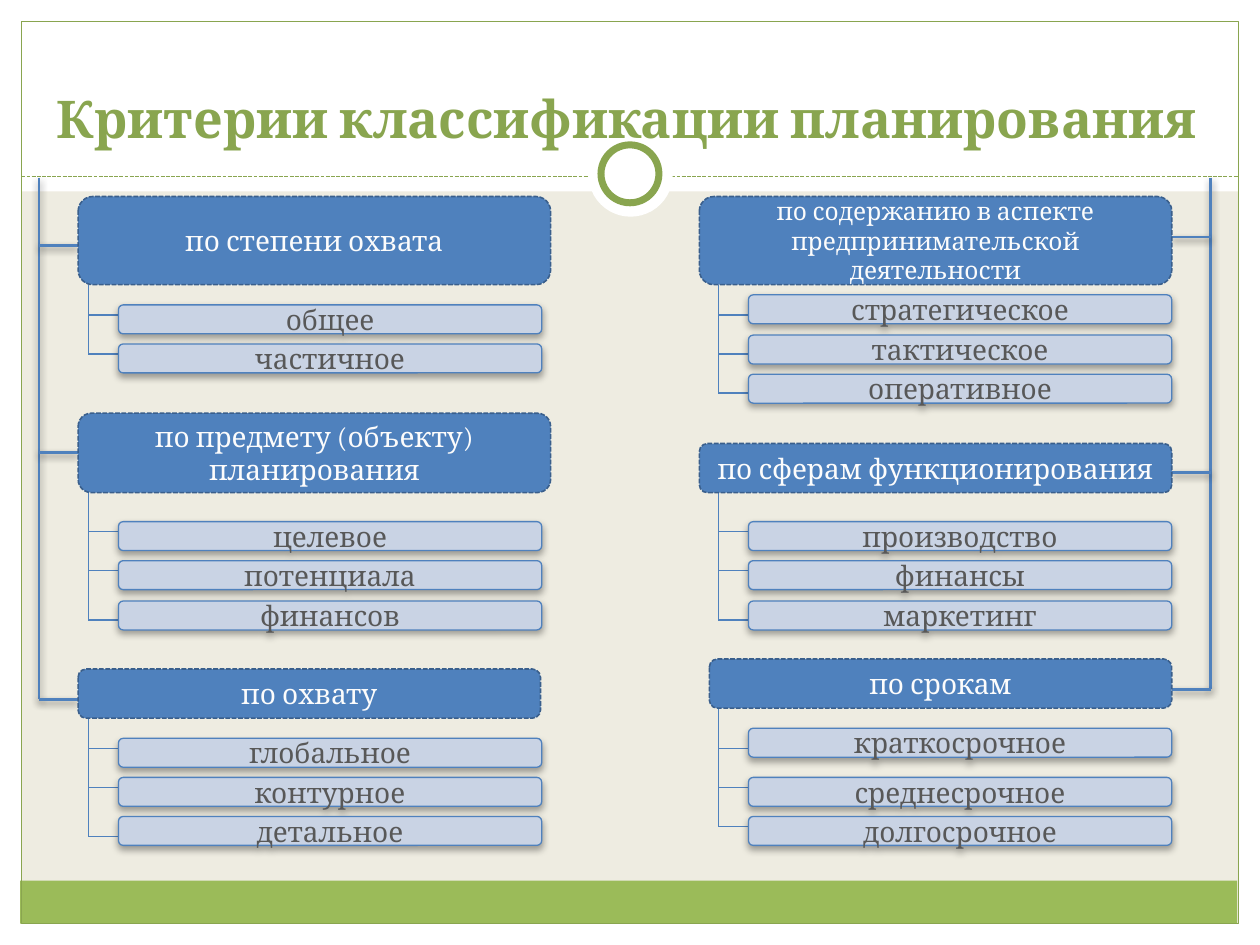
from lxml import etree
from pptx import Presentation
from pptx.dml.color import RGBColor
from pptx.enum.dml import MSO_LINE
from pptx.enum.shapes import MSO_CONNECTOR, MSO_SHAPE
from pptx.enum.text import MSO_ANCHOR, PP_ALIGN
from pptx.oxml import parse_xml
from pptx.oxml.ns import nsdecls, qn
from pptx.util import Inches, Pt

RECT, ROUND, OVAL = MSO_SHAPE.RECTANGLE, MSO_SHAPE.ROUNDED_RECTANGLE, MSO_SHAPE.OVAL
DASH = MSO_LINE.SQUARE_DOT
FONT = "Cambria"
WHITE, GREEN, BLUE = "FFFFFF", "89A54F", "4F81BD"
TITLE = "Критерии классификации планирования"

BARS = [
    ((0, 7.33, 10, 0.17), WHITE),
    ((0, 0, 10, 1.52), WHITE),
    ((0, 0, 0.17, 7.5), WHITE),
    ((9.83, 0, 0.17, 7.5), WHITE),
    ((0.16, 6.99, 9.66, 0.34), "9BBB59"),
]

# rail: x of the trunk; edge: x where its branches meet the heads
# group: head text, size, box, branch y, items as (text, top, branch y)
SIDES = [
    {"rail": 0.31, "edge": 0.62, "stem": 0.7, "groups": [
        ("по степени охвата", 16, (0.62, 1.56, 3.75, 0.7), 1.95,
         [("общее", 2.42, 2.5), ("частичное", 2.73, 2.81)]),
        ("по предмету (объекту) планирования", 16, (0.62, 3.28, 3.75, 0.63), 3.59,
         [("целевое", 4.14, 4.22), ("потенциала", 4.45, 4.53), ("финансов", 4.77, 4.92)]),
        ("по охвату", 16, (0.62, 5.31, 3.67, 0.39), 5.55,
         [("глобальное", 5.86, 5.94), ("контурное", 6.17, 6.25), ("детальное", 6.48, 6.64)]),
    ]},
    {"rail": 9.61, "edge": 9.3, "stem": 5.7, "groups": [
        ("по содержанию в аспекте предпринимательской деятельности", 14,
         (5.55, 1.56, 3.75, 0.7), 1.88,
         [("стратегическое", 2.34, 2.5), ("тактическое", 2.66, 2.81),
          ("оперативное", 2.97, 3.12)]),
        ("по сферам функционирования", 16, (5.55, 3.52, 3.75, 0.39), 3.75,
         [("производство", 4.14, 4.22), ("финансы", 4.45, 4.53), ("маркетинг", 4.77, 4.92)]),
        ("по срокам", 16, (5.63, 5.23, 3.67, 0.39), 5.47,
         [("краткосрочное", 5.78, 5.94), ("среднесрочное", 6.17, 6.25),
          ("долгосрочное", 6.48, 6.56)]),
    ]},
]


def rgb(code):
    return RGBColor.from_string(code)


def shade(item, alpha):
    """Give a shape or line a soft shadow straight below it."""
    props = item._element.spPr
    for old in props.findall(qn("a:effectLst")):
        props.remove(old)
    props.append(parse_xml(
        f'<a:effectLst {nsdecls("a")}><a:outerShdw blurRad="{Pt(4)}" dist="{Pt(2)}" '
        f'dir="5400000" rotWithShape="0"><a:srgbClr val="000000">'
        f'<a:alpha val="{alpha * 1000}"/></a:srgbClr></a:outerShdw></a:effectLst>'))


def stroke(line, color, width, dash=None):
    line.color.rgb = rgb(color)
    line.width = Pt(width)
    if dash:
        line.dash_style = dash


def add_box(slide, kind, box, fill=None, line=None):
    shape = slide.shapes.add_shape(kind, *map(Inches, box))
    shape.shadow.inherit = False
    if fill:
        shape.fill.solid()
        shape.fill.fore_color.rgb = rgb(fill)
    else:
        shape.fill.background()
    if line:
        stroke(shape.line, *line)
    else:
        shape.line.fill.background()
    return shape


def add_line(slide, x1, y1, x2, y2, color=BLUE, width=0.75, dash=None):
    line = slide.shapes.add_connector(
        MSO_CONNECTOR.STRAIGHT, *map(Inches, (x1, y1, x2, y2)))
    stroke(line.line, color, width, dash)
    etree.SubElement(line._element.spPr, qn("a:effectLst"))
    return line


def write(shape, text, size, color, bold=False):
    frame = shape.text_frame
    frame.text = text
    frame.word_wrap = True
    frame.vertical_anchor = MSO_ANCHOR.MIDDLE
    par = frame.paragraphs[0]
    par.alignment = PP_ALIGN.CENTER
    font = par.runs[0].font
    font.name, font.size, font.bold = FONT, Pt(size), bold
    font.color.rgb = rgb(color)


def add_frame(slide):
    for box, fill in BARS:
        add_box(slide, RECT, box, fill)
    add_box(slide, RECT, (0.17, 0.17, 9.66, 7.16), line=(GREEN, 0.75))
    add_line(slide, 0.17, 1.4, 9.83, 1.4, GREEN, 0.75, DASH)
    add_box(slide, OVAL, (4.67, 1.05, 0.67, 0.67), WHITE)
    add_box(slide, OVAL, (4.77, 1.15, 0.46, 0.46), WHITE, (GREEN, 4))


def set_title(slide):
    title = slide.shapes.title
    title.left, title.top, title.width, title.height = map(
        Inches, (0.31, 0.86, 9.33, 0.83))
    write(title, TITLE, 29.7, GREEN, True)
    frame = title.text_frame
    frame.vertical_anchor = MSO_ANCHOR.BOTTOM
    frame.margin_top, frame.margin_bottom = 0, Inches(0.51)
    slide.shapes._spTree.append(title._element)  # in front of the frame


def add_side(slide, side):
    rail, edge, stem, groups = side.values()
    shade(add_line(slide, rail, 1.41, rail, groups[-1][3], width=1.57), 45)
    for head, size, box, level, items in groups:
        shade(add_line(slide, rail, level, edge, level, width=1.57), 45)
        add_line(slide, stem, box[1] + box[3], stem, items[-1][2])
        shape = add_box(slide, ROUND, box, BLUE, ("3A5F8C", 0.9, DASH))
        write(shape, head, size, "FCFCFC")
        for text, top, branch in items:
            add_line(slide, stem, branch, stem + 0.24, branch)
            shape = add_box(slide, ROUND, (stem + 0.24, top, 3.36, 0.23),
                            "C9D3E4", (BLUE, 0.75))
            shade(shape, 35)
            write(shape, text, 16, "585858")


def main():
    deck = Presentation()
    deck.slide_width, deck.slide_height = Inches(10), Inches(7.5)
    slide = deck.slides.add_slide(deck.slide_layouts[5])
    slide.background.fill.solid()
    slide.background.fill.fore_color.rgb = rgb("EEECE1")
    add_frame(slide)
    set_title(slide)
    for side in SIDES:
        add_side(slide, side)
    deck.save("out.pptx")


if __name__ == "__main__":
    main()
